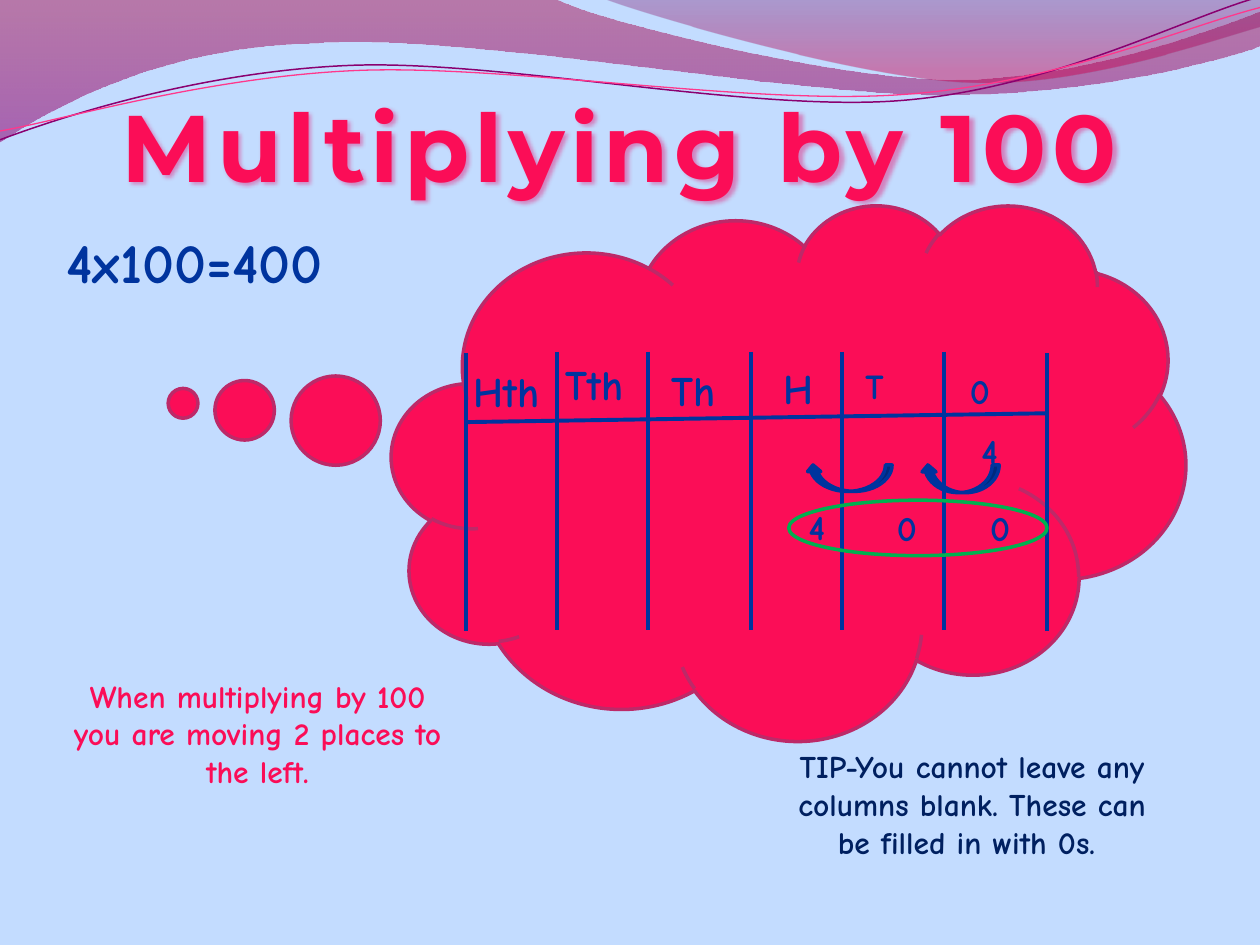
from dataclasses import dataclass

from lxml import etree
from pptx import Presentation
from pptx.dml.color import RGBColor
from pptx.enum.shapes import MSO_CONNECTOR, MSO_SHAPE
from pptx.enum.text import MSO_AUTO_SIZE, PP_ALIGN
from pptx.oxml.ns import qn
from pptx.util import Inches, Pt

LEFT, CENTER = PP_ALIGN.LEFT, PP_ALIGN.CENTER
FIT_SHAPE = MSO_AUTO_SIZE.SHAPE_TO_FIT_TEXT
STRAIGHT = MSO_CONNECTOR.STRAIGHT
CLOUD, ARC_ARROW, OVAL = MSO_SHAPE.CLOUD_CALLOUT, MSO_SHAPE.CURVED_UP_ARROW, MSO_SHAPE.OVAL


@dataclass(frozen=True)
class Theme:
    sky: str = "C3DCFF"
    pink: str = "FB0D57"
    title_edge: str = "E90062"
    cloud_edge: str = "BD2968"
    blue: str = "00349E"
    navy: str = "002060"
    green: str = "00B050"
    purple_strand: str = "8A0070"
    pink_strand: str = "FF388C"
    title_font: str = "Montserrat"
    body_font: str = "Comic Neue"
    title_size: int = 54
    sum_size: int = 32
    heading_size: int = 24
    digit_size: int = 20
    note_size: int = 18


THEME = Theme()

# Each wave: start point, then straight points (x, y) or Bezier triples (six numbers)
WIDE_WAVE = [(0, 0), (4.4, -0.01), (4.76, 0.17, 6.64, 0.63, 7.58, 0.63),
             (8.53, 0.63, 9.58, 0.26, 10, 0.09), (10.01, 0.36),
             (9.83, 0.44, 8.7, 0.76, 7.46, 0.75), (6.22, 0.75, 3.82, 0.28, 2.57, 0.34),
             (1.29, 0.36, 0.46, 0.83, -0.01, 1.13), (0, 0)]
RIGHT_WAVE = [(4.79, -0.01), (5.09, 0.11, 6.82, 0.62, 7.69, 0.65),
              (8.56, 0.69, 9.61, 0.32, 10, 0.21), (10, 0), (4.79, -0.01)]
PURPLE_STRAND = [(0, 1.11), (0.48, 0.93, 1.58, 0.57, 2.77, 0.52),
                 (3.95, 0.47, 5.93, 0.89, 7.13, 0.8), (8.33, 0.71, 9.38, 0.15, 9.98, -0.02)]
PINK_STRAND = [(0, 1.04), (0.47, 0.96, 1.64, 0.61, 2.83, 0.56),
               (4.03, 0.51, 5.97, 0.84, 7.17, 0.75), (8.36, 0.67, 9.41, 0.21, 10, 0.06)]

COLUMN_EDGES = [3.7, 4.42, 5.14, 5.96, 6.68, 7.49, 8.31]
# Text, left, top, width, height, size
HEADINGS = [("Hth", 3.66, 2.85, 0.84, 0.5, THEME.heading_size),
            ("Tth", 4.39, 2.8, 0.84, 0.5, THEME.heading_size),
            ("Th", 5.23, 2.84, 0.81, 0.5, THEME.heading_size),
            ("H", 6.12, 2.83, 0.63, 0.5, THEME.heading_size),
            ("T", 6.77, 2.84, 0.8, 0.44, THEME.digit_size),
            ("0", 7.6, 2.88, 0.63, 0.44, THEME.digit_size)]
STARTING_DIGIT = ("4", 7.69, 3.36)
ANSWER_DIGITS = [("4", 6.32, 3.96), ("0", 7.02, 3.97), ("0", 7.76, 3.97)]


def rgb(value):
    return RGBColor.from_string(value)


def set_line(line, color, width):
    line.color.rgb = rgb(color)
    line.width = Pt(width)


def add_curve(shapes, outline, close):
    """Draw through every point, then turn each triple of steps into one Bezier."""
    start, *segments = outline
    builder = shapes.build_freeform(*map(Inches, start), scale=1.0)
    for segment in segments:
        lengths = [Inches(value) for value in segment]
        builder.add_line_segments(list(zip(lengths[::2], lengths[1::2])), close=False)
    if close:
        builder.add_line_segments([], close=True)
    curve = builder.convert_to_shape()
    curve.shadow.inherit = False

    steps = iter(list(curve._element.spPr.iter(qn("a:lnTo"))))
    for segment in segments:
        step = next(steps)
        if len(segment) == 6:
            step.tag = qn("a:cubicBezTo")
            for _ in range(2):
                extra = next(steps)
                step.append(extra[0])
                extra.getparent().remove(extra)
    return curve


def add_wave(shapes, outline, stops):
    """Stops are (position, colour, opacity in percent), from top to bottom."""
    wave = add_curve(shapes, outline, True)
    wave.line.fill.background()
    wave.fill.gradient()
    wave.fill.gradient_angle = 270
    for stop, (position, color, _) in zip(wave.fill.gradient_stops, stops):
        stop.position = position
        stop.color.rgb = rgb(color)
    for tint, (_, _, opacity) in zip(wave._element.spPr.iter(qn("a:srgbClr")), stops):
        etree.SubElement(tint, qn("a:alpha"), val=str(opacity * 1000))


def add_strand(shapes, outline, color, width):
    strand = add_curve(shapes, outline, False)
    strand.fill.background()
    set_line(strand.line, color, width)


def add_rule(shapes, x1, y1, x2, y2):
    rule = shapes.add_connector(STRAIGHT, Inches(x1), Inches(y1), Inches(x2), Inches(y2))
    set_line(rule.line, THEME.blue, 2.25)
    etree.SubElement(rule._element.spPr, qn("a:effectLst"))


def add_figure(shapes, kind, box, fill, line):
    figure = shapes.add_shape(kind, *map(Inches, box))
    figure.shadow.inherit = False
    if fill:
        figure.fill.solid()
        figure.fill.fore_color.rgb = rgb(fill)
    else:
        figure.fill.background()
    set_line(figure.line, line, 2)
    return figure


def add_label(shapes, text, box, size, color=THEME.blue, align=LEFT,
              font=THEME.body_font, wrap=True):
    label = shapes.add_textbox(*map(Inches, box))
    label.text_frame.word_wrap = wrap
    label.text_frame.auto_size = FIT_SHAPE
    paragraph = label.text_frame.paragraphs[0]
    paragraph.text = text
    paragraph.alignment = align
    paragraph.font.name = font
    paragraph.font.size = Pt(size)
    paragraph.font.bold = True
    paragraph.font.color.rgb = rgb(color)
    return label


def add_title(shapes):
    title = add_label(shapes, "Multiplying by 100", (0.67, 0.65, 8.5, 1.01), THEME.title_size,
                      THEME.pink, CENTER, THEME.title_font, wrap=False)
    # Letter spacing, outline and soft shadow
    letters = title.text_frame.paragraphs[0].runs[0]._r.get_or_add_rPr()
    letters.set("spc", "300")
    edge = etree.SubElement(letters, qn("a:ln"), w=str(Pt(2.25)))
    edge_fill = etree.SubElement(edge, qn("a:solidFill"))
    etree.SubElement(edge_fill, qn("a:srgbClr"), val=THEME.title_edge)
    effects = etree.SubElement(title._element.spPr, qn("a:effectLst"))
    shadow = etree.SubElement(effects, qn("a:outerShdw"), blurRad=str(Pt(2)),
                              dist=str(Pt(1)), dir="2700000")
    tint = etree.SubElement(shadow, qn("a:srgbClr"), val=THEME.title_edge)
    etree.SubElement(tint, qn("a:alpha"), val="40000")


def add_place_value_grid(shapes):
    grid = shapes.add_group_shape().shapes
    first, last = COLUMN_EDGES[0], COLUMN_EDGES[-1]
    for x in COLUMN_EDGES:
        top = 2.8 if x in (first, last) else 2.79
        add_rule(grid, x, top, x, top + 2.21)
    add_rule(grid, last, 3.28, first, 3.35)
    for text, *box, size in HEADINGS:
        add_label(grid, text, box, size)


def main():
    deck = Presentation()
    deck.slide_width, deck.slide_height = Inches(10), Inches(7.5)
    slide = deck.slides.add_slide(deck.slide_layouts[6])
    slide.background.fill.solid()
    slide.background.fill.fore_color.rgb = rgb(THEME.sky)
    shapes = slide.shapes

    # Waves along the top
    add_wave(shapes, WIDE_WAVE, [(0, "A90042", 45), (1, "8E0073", 55)])
    add_wave(shapes, RIGHT_WAVE, [(0, "73005E", 30), (0.8, "C9004F", 45)])
    add_strand(shapes, PURPLE_STRAND, THEME.purple_strand, 0.85)
    add_strand(shapes, PINK_STRAND, THEME.pink_strand, 0.75)

    # Title and example
    add_title(shapes)
    add_label(shapes, "4x100=400", (0.43, 1.76, 4.17, 0.91), THEME.sum_size)

    # Thought cloud with the place value grid
    cloud = add_figure(shapes, CLOUD, (3.11, 1.62, 6.3, 4.25), THEME.pink, THEME.cloud_edge)
    cloud.adjustments[0], cloud.adjustments[1] = -0.763, -0.128
    add_place_value_grid(shapes)

    # Digits moving two places to the left
    for text, left, top in [STARTING_DIGIT, *ANSWER_DIGITS]:
        add_label(shapes, text, (left, top, 0.55, 0.44), THEME.digit_size)
    for box in [(7.31, 3.69, 0.62, 0.22), (6.4, 3.69, 0.68, 0.21)]:
        jump = add_figure(shapes, ARC_ARROW, box, THEME.blue, THEME.blue)
        jump._element.spPr.find(qn("a:xfrm")).set("flipH", "1")
    add_figure(shapes, OVAL, (6.26, 3.97, 2.05, 0.44), None, THEME.green)

    # Explanations
    add_label(shapes, "When multiplying by 100 you are moving 2 places to the left.",
              (0.43, 5.32, 3.23, 1.01), THEME.note_size, THEME.pink, CENTER)
    add_label(shapes, "TIP-You cannot leave any columns blank. These can be filled in with 0s. ",
              (6.1, 5.88, 3.23, 1.31), THEME.note_size, THEME.navy, CENTER)

    deck.save("out.pptx")


if __name__ == "__main__":
    main()
